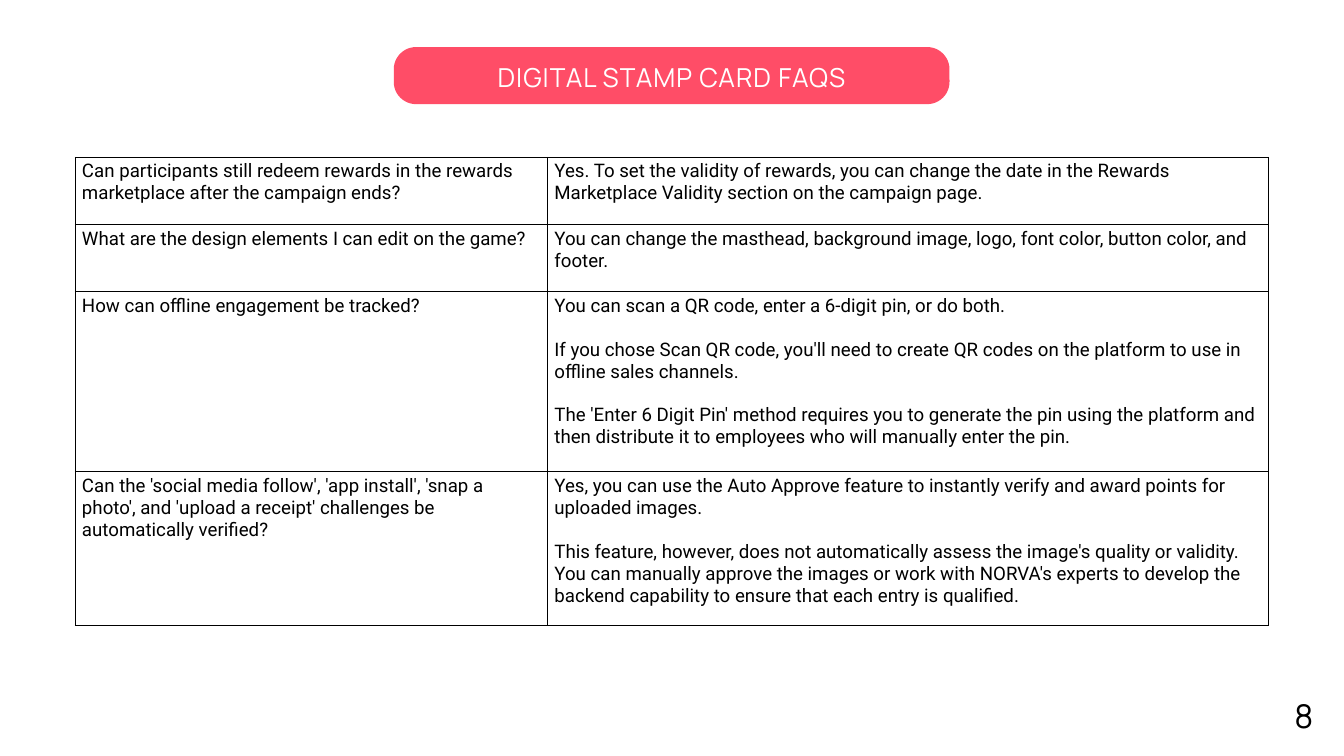
from lxml import etree
from pptx import Presentation
from pptx import util as u
from pptx.dml.color import RGBColor
from pptx.enum import shapes, text
from pptx.oxml.ns import qn

Inches, Pt = u.Inches, u.Pt

PINK, WHITE, BLACK = "FF4D67", "FFFFFF", "000000"
TITLE_FONT = {"name": "Manrope", "size": Pt(28), "bold": False}
PAGE_FONT = {"name": "Manrope", "size": Pt(35)}
CELL_FONT = {"name": "Roboto", "size": Pt(20), "bold": False}
ANSWER_GAP = Pt(23.4)

# Each entry: row height, question, answer paragraphs
FAQS = [
    (1, "Can participants still redeem rewards in the rewards marketplace after the campaign ends?",
     ["Yes. To set the validity of rewards, you can change the date in the Rewards "
      "Marketplace Validity section on the campaign page."]),
    (1, "What are the design elements I can edit on the game?",
     ["You can change the masthead, background image, logo, font color, button color, and footer."]),
    (2.68, "How can offline engagement be tracked?",
     ["You can scan a QR code, enter a 6-digit pin, or do both.",
      "If you chose Scan QR code, you'll need to create QR codes on the platform to use in "
      "offline sales channels.",
      "The 'Enter 6 Digit Pin' method requires you to generate the pin using the platform and "
      "then distribute it to employees who will manually enter the pin."]),
    (2.29, "Can the 'social media follow', 'app install', 'snap a photo', and 'upload a receipt' "
     "challenges be automatically verified?",
     ["Yes, you can use the Auto Approve feature to instantly verify and award points for "
      "uploaded images.",
      "This feature, however, does not automatically assess the image's quality or validity. "
      "You can manually approve the images or work with NORVA's experts to develop the "
      "backend capability to ensure that each entry is qualified."]),
]


def rgb(value):
    return RGBColor.from_string(value)


def set_attrs(obj, values):
    for name, value in values.items():
        setattr(obj, name, value)


def add_run(p, content, font, color):
    r = p.add_run()
    r.text = content
    set_attrs(r.font, font)
    r.font.color.rgb = rgb(color)
    return r


def set_margins(obj, margin):
    set_attrs(obj, {f"margin_{side}": Inches(margin)
                    for side in ("left", "top", "right", "bottom")})


def add_banner(s, x, y, w, h, content):
    """Rounded banner with the slide title centred on it."""
    sp = s.shapes.add_shape(shapes.MSO_SHAPE.ROUNDED_RECTANGLE,
                            Inches(x), Inches(y), Inches(w), Inches(h))
    sp.adjustments[0] = 0.39
    sp.shadow.inherit = False
    sp.fill.solid()
    sp.fill.fore_color.rgb = rgb(PINK)
    sp.line.fill.background()

    title = s.shapes.title
    set_attrs(title, {"left": Inches(x), "top": Inches(y - 0.02),
                      "width": Inches(w), "height": Inches(h)})
    sp._element.addnext(title._element)  # bring the title in front of the banner
    tf = title.text_frame
    set_margins(tf, 0.06)
    set_attrs(tf, {"word_wrap": True, "auto_size": text.MSO_AUTO_SIZE.NONE,
                   "vertical_anchor": text.MSO_ANCHOR.MIDDLE})
    p = tf.paragraphs[0]
    set_attrs(p, {"alignment": text.PP_ALIGN.CENTER, "line_spacing": Pt(39.2),
                  "space_before": Pt(0)})
    r = add_run(p, content, TITLE_FONT, WHITE)
    r._r.get_or_add_rPr().set("spc", "110")


def add_borders(cell, color, width):
    tc_pr = cell._tc.get_or_add_tcPr()
    for i, side in enumerate(("lnL", "lnR", "lnT", "lnB")):
        ln = etree.Element(qn(f"a:{side}"), w=str(Pt(width)))
        fill = etree.SubElement(ln, qn("a:solidFill"))
        etree.SubElement(fill, qn("a:srgbClr"), val=color)
        tc_pr.insert(i, ln)


def fill_cell(cell, paragraphs):
    cell.fill.background()
    add_borders(cell, BLACK, 0.75)
    tf = cell.text_frame
    for i, content in enumerate(paragraphs):
        p = tf.add_paragraph() if i else tf.paragraphs[0]
        if i:
            p.space_before = ANSWER_GAP
        add_run(p, content, CELL_FONT, BLACK)


def add_faq_table(s, x, y, col_widths, faqs):
    height = sum(faq[0] for faq in faqs)
    table = s.shapes.add_table(len(faqs), len(col_widths), Inches(x), Inches(y),
                               Inches(sum(col_widths)), Inches(height)).table
    set_attrs(table, {"first_row": False, "horz_banding": False})
    for col, width in zip(table.columns, col_widths):
        col.width = Inches(width)
    for row, (row_height, question, answer) in zip(table.rows, faqs):
        row.height = Inches(row_height)
        fill_cell(row.cells[0], [question])
        fill_cell(row.cells[1], answer)


def add_page_number(s, x, y, w, h, number):
    tf = s.shapes.add_textbox(Inches(x), Inches(y), Inches(w), Inches(h)).text_frame
    set_margins(tf, 0)
    tf.word_wrap = True
    p = tf.paragraphs[0]
    p.line_spacing = Pt(66.5)
    add_run(p, number, PAGE_FONT, BLACK)


def main():
    prs = Presentation()
    set_attrs(prs, {"slide_width": Inches(20), "slide_height": Inches(11.25)})
    s = prs.slides.add_slide(prs.slide_layouts[5])
    add_banner(s, 5.86, 0.7, 8.27, 0.85, "DIGITAL STAMP CARD FAQS")
    add_page_number(s, 19.26, 10.02, 0.31, 0.87, "8")
    add_faq_table(s, 1.12, 2.34, [7.03, 10.73], FAQS)
    prs.save("out.pptx")


if __name__ == "__main__":
    main()
